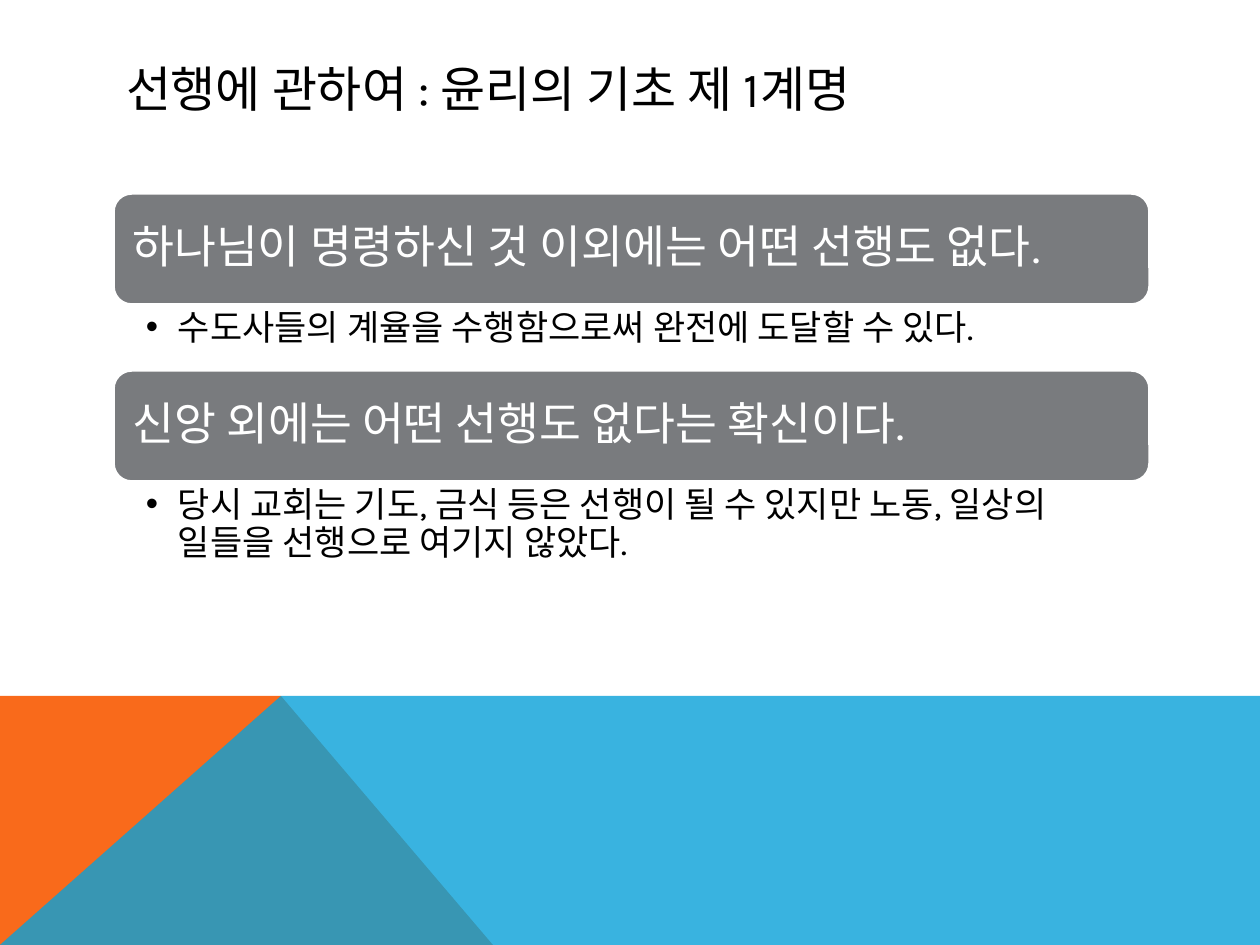
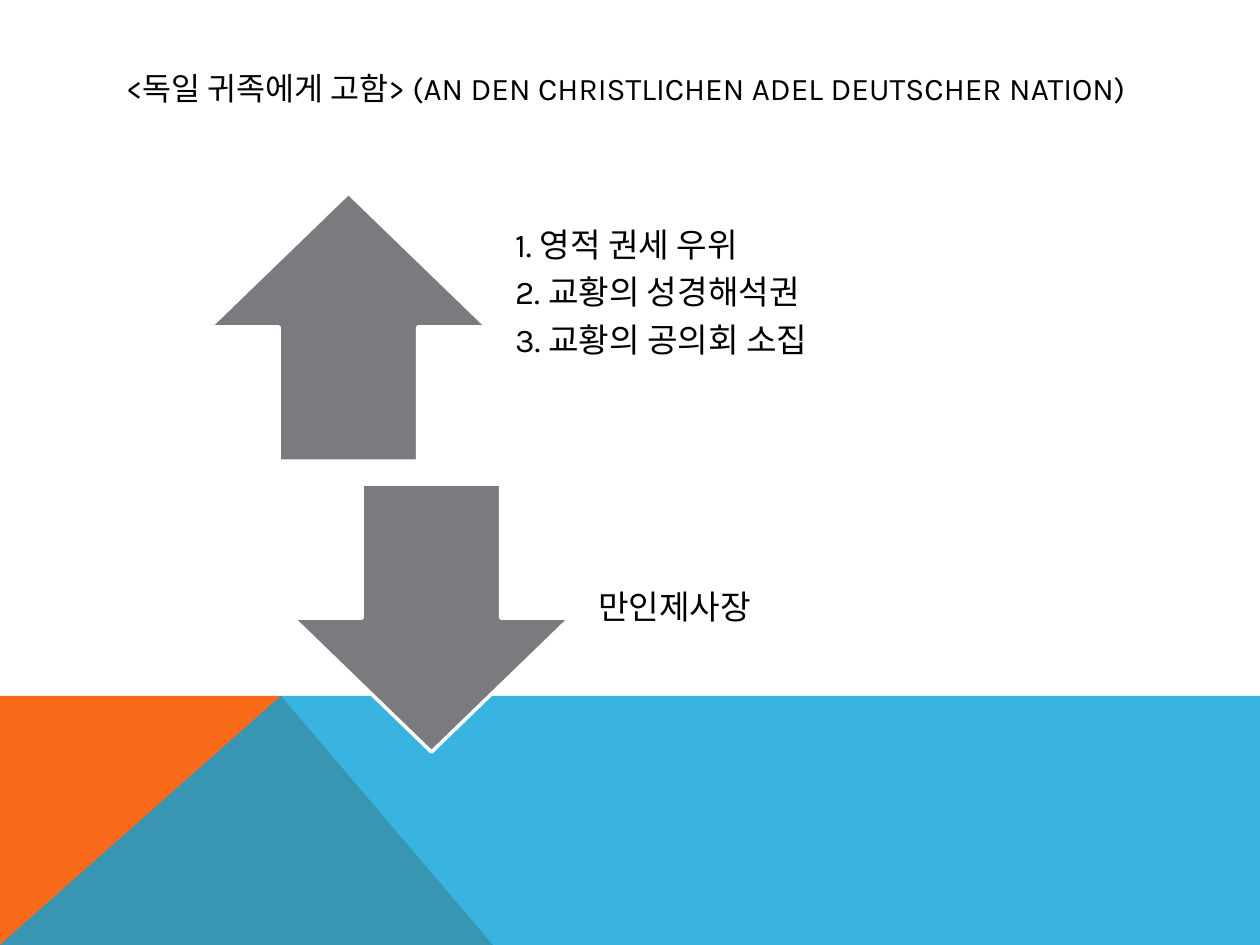
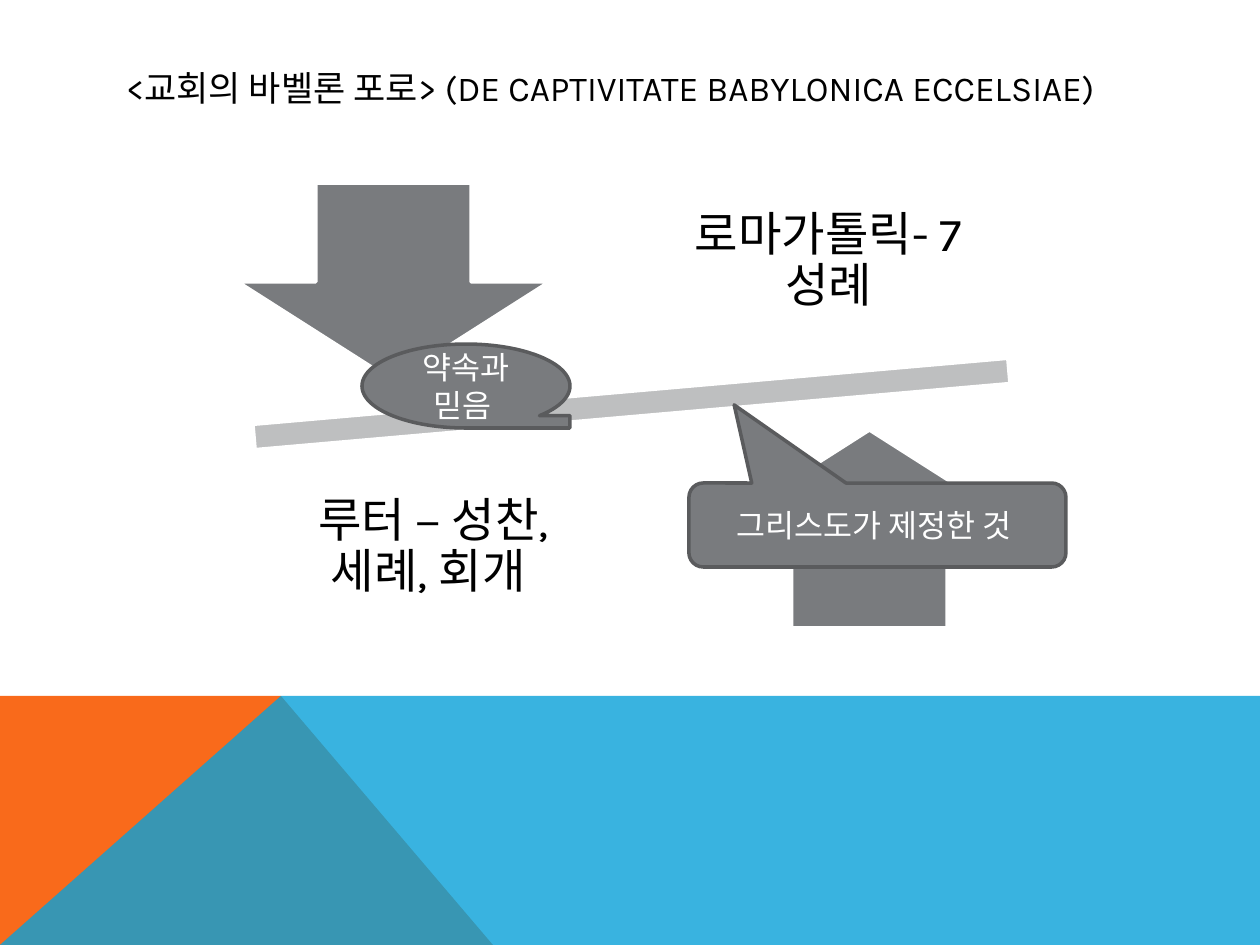
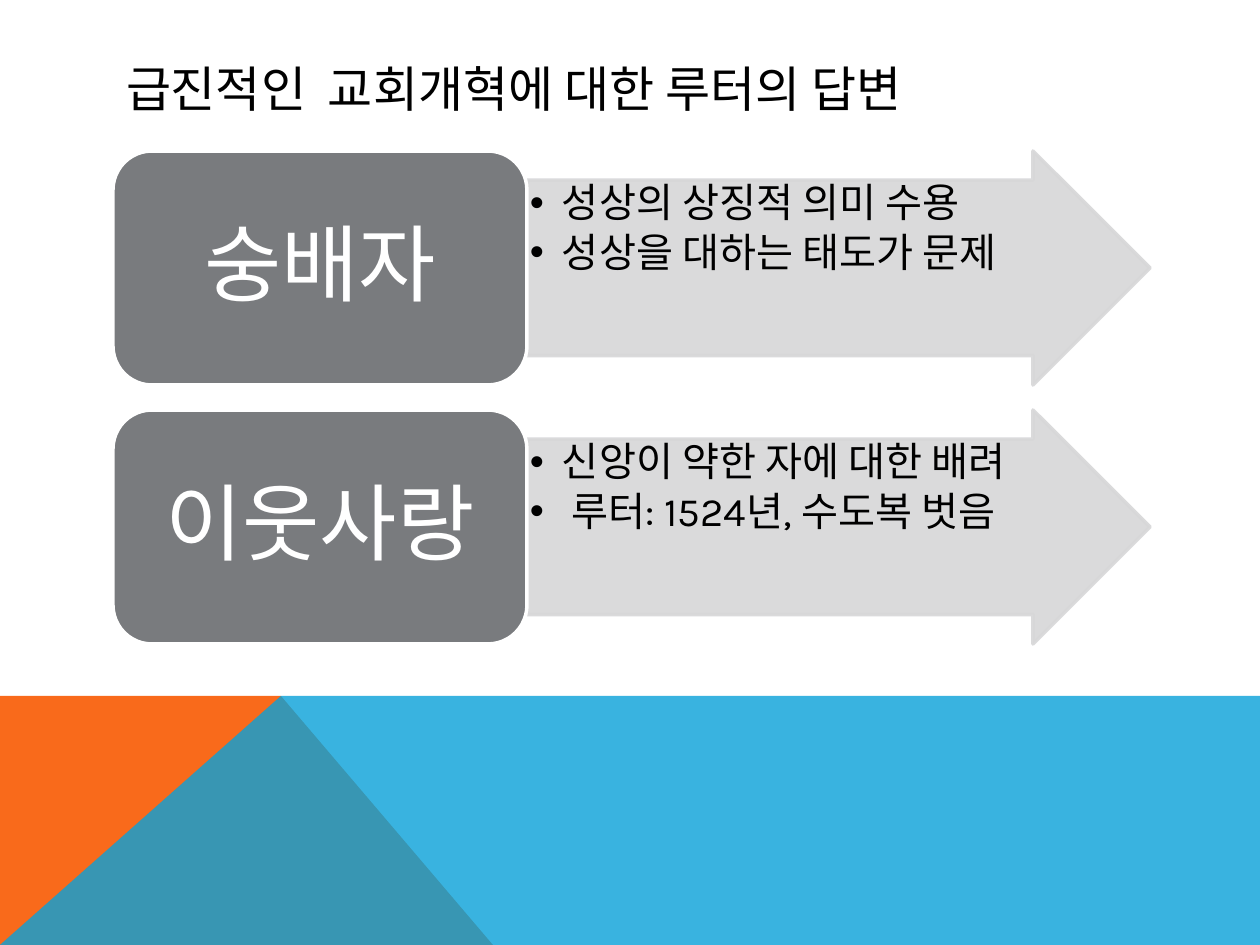
from dataclasses import dataclass

from lxml import etree
from pptx import Presentation
from pptx.dml.color import RGBColor
from pptx.enum.shapes import MSO_SHAPE
from pptx.enum.text import MSO_ANCHOR, MSO_AUTO_SIZE, PP_ALIGN
from pptx.oxml.ns import qn
from pptx.presentation import Presentation as Deck
from pptx.shapes.autoshape import Shape
from pptx.slide import Slide
from pptx.util import Emu, Pt

PX = 914400 / 126
WIDTH, HEIGHT = 1260, 945
FONT = "Karla"
TITLE_ONLY = 5

BLACK = RGBColor(0x00, 0x00, 0x00)
WHITE = RGBColor(0xFF, 0xFF, 0xFF)
ORANGE = RGBColor(0xF9, 0x6A, 0x1B)
BLUE = RGBColor(0x08, 0xA1, 0xD9)
GRAY = RGBColor(0x79, 0x7B, 0x7E)
DARK_GRAY = RGBColor(0x5A, 0x5B, 0x5D)
BEAM_GRAY = RGBColor(0xBE, 0xBF, 0xC0)
PALE_GRAY = RGBColor(0xD7, 0xD7, 0xD8)

LEFT, CENTER = PP_ALIGN.LEFT, PP_ALIGN.CENTER
TOP, MIDDLE = MSO_ANCHOR.TOP, MSO_ANCHOR.MIDDLE
ROUND_BOX = MSO_SHAPE.ROUNDED_RECTANGLE
UP_ARROW = MSO_SHAPE.UP_ARROW
DOWN_ARROW = MSO_SHAPE.DOWN_ARROW
RIGHT_ARROW = MSO_SHAPE.RIGHT_ARROW
MINUS = MSO_SHAPE.MATH_MINUS
TAPE = MSO_SHAPE.FLOWCHART_SEQUENTIAL_ACCESS_STORAGE
CALLOUT = MSO_SHAPE.ROUNDED_RECTANGULAR_CALLOUT

BAND_TOP, BAND_PEAK, BAND_FOOT = 696, 281, 493
CONTENT_LEFT, CONTENT_WIDTH = 113, 1037


@dataclass(frozen=True)
class Area:
    left: int
    top: int
    width: int
    height: int

    def emu(self) -> list[Emu]:
        return [px(n) for n in (self.left, self.top, self.width, self.height)]


@dataclass(frozen=True)
class TextStyle:
    size: int
    color: RGBColor = BLACK
    align: PP_ALIGN = LEFT
    anchor: MSO_ANCHOR = MIDDLE
    insets: tuple[int, int, int, int] = (13, 6, 13, 6)
    line_spacing: float = 0.9
    after: float = 0.35  # share of the text size
    bullet: bool = False


@dataclass(frozen=True)
class Look:
    fill: RGBColor = GRAY
    line: RGBColor = WHITE
    opacity: int = 100


BLOCK = Look()
BEAM = Look(fill=BEAM_GRAY)
PALE = Look(PALE_GRAY, PALE_GRAY, 90)
NOTE = Look(line=DARK_GRAY)

HEADING = TextStyle(26, WHITE, insets=(14, 14, 14, 14))
DETAIL = TextStyle(20, anchor=TOP, insets=(33, 5, 25, 5), after=0.2, bullet=True)
CLAIM = TextStyle(19, insets=(19, 0, 19, 19))
CLAIM_LIST = TextStyle(19, insets=(19, 0, 19, 66))
SIDE = TextStyle(27, align=CENTER, insets=(26, 26, 26, 26))
NOTE_TEXT = TextStyle(18, WHITE, CENTER, line_spacing=1, after=0)
TOPIC = TextStyle(48, WHITE, CENTER, insets=(25, 13, 25, 13))
ANSWER = TextStyle(23, anchor=TOP, insets=(3, 3, 3, 3), after=0.15, bullet=True)


def px(length: int) -> Emu:
    return Emu(round(length * PX))


def apply(target, values: dict) -> None:
    for name, value in values.items():
        setattr(target, name, value)


def set_opacity(shape: Shape, percent: int) -> None:
    """Make every plain colour of the shape's fill and line see-through."""
    for color in shape.element.spPr.iter(qn("a:srgbClr")):
        etree.SubElement(color, qn("a:alpha"), val=str(percent * 1000))


def add_bullet(para) -> None:
    props = para._p.get_or_add_pPr()
    indent = px(32)
    apply_to = {"marL": indent, "indent": -indent}
    for name, value in apply_to.items():
        props.set(name, str(value))
    etree.SubElement(props, qn("a:buFont"), typeface="Arial")
    etree.SubElement(props, qn("a:buChar"), char="•")


def write(shape: Shape, lines: list[str], style: TextStyle) -> None:
    frame = shape.text_frame
    sides = ("margin_left", "margin_top", "margin_right", "margin_bottom")
    apply(frame, {
        "word_wrap": True,
        "auto_size": MSO_AUTO_SIZE.NONE,
        "vertical_anchor": style.anchor,
        **{side: px(inset) for side, inset in zip(sides, style.insets)},
    })
    for number, line in enumerate(lines):
        para = frame.add_paragraph() if number else frame.paragraphs[0]
        apply(para, {
            "alignment": style.align,
            "line_spacing": style.line_spacing,
            "space_before": Pt(0),
            "space_after": Pt(round(style.size * style.after, 2)),
        })
        if style.bullet:
            add_bullet(para)
        span = para.add_run()
        span.text = line
        apply(span.font, {"name": FONT, "size": Pt(style.size)})
        span.font.color.rgb = style.color


def add_block(page: Slide, kind: MSO_SHAPE, area: Area, look: Look = BLOCK,
              adjustments: tuple[float, ...] = ()) -> Shape:
    shape = page.shapes.add_shape(kind, *area.emu())
    shape.shadow.inherit = False
    shape.fill.solid()
    shape.fill.fore_color.rgb = look.fill
    shape.line.color.rgb = look.line
    shape.line.width = Pt(2)
    if look.opacity < 100:
        set_opacity(shape, look.opacity)
    for number, value in enumerate(adjustments):
        shape.adjustments[number] = value
    return shape


def add_label(page: Slide, area: Area, lines: list[str], style: TextStyle) -> None:
    write(page.shapes.add_textbox(*area.emu()), lines, style)


def add_page(deck: Deck, title: str, size: int) -> Slide:
    page = deck.slides.add_slide(deck.slide_layouts[TITLE_ONLY])
    holder = page.shapes.title
    area = Area(CONTENT_LEFT, 50, CONTENT_WIDTH, 76).emu()
    apply(holder, dict(zip(("left", "top", "width", "height"), area)))
    write(holder, [title], TextStyle(size, line_spacing=1, after=0))
    return page


def add_band(deck: Deck) -> None:
    """Draw the bottom band on the shared layout, by way of a first page's shapes."""
    layout = deck.slide_layouts[TITLE_ONLY]
    page = deck.slides[0]
    pieces = [
        ([(0, BAND_TOP), (BAND_PEAK, BAND_TOP), (BAND_FOOT, HEIGHT)], ORANGE, 100),
        ([(BAND_PEAK, BAND_TOP), (WIDTH, BAND_TOP), (WIDTH, HEIGHT)], BLUE, 80),
    ]
    for number, (points, color, opacity) in enumerate(pieces):
        builder = page.shapes.build_freeform(0, HEIGHT, scale=PX)
        builder.add_line_segments(points, close=True)
        piece = builder.convert_to_shape()
        piece.shadow.inherit = False
        piece.fill.solid()
        piece.fill.fore_color.rgb = color
        piece.line.fill.background()
        if opacity < 100:
            set_opacity(piece, opacity)
        piece.element.nvSpPr.cNvPr.set("id", str(100 + number))
        layout.shapes.element.insert(2 + number, piece.element)


def add_good_works(deck: Deck) -> None:
    page = add_page(deck, "선행에 관하여 : 윤리의 기초 제 1계명", 28)
    sections = [
        ("하나님이 명령하신 것 이외에는 어떤 선행도 없다.",
         "수도사들의 계율을 수행함으로써 완전에 도달할 수 있다.", 65),
        ("신앙 외에는 어떤 선행도 없다는 확신이다.",
         "당시 교회는 기도, 금식 등은 선행이 될 수 있지만 노동, 일상의 일들을 "
         "선행으로 여기지 않았다.", 122),
    ]
    top, heading_height = 193, 112
    for heading, detail, detail_height in sections:
        area = Area(CONTENT_LEFT, top, CONTENT_WIDTH, heading_height)
        write(add_block(page, ROUND_BOX, area), [heading], HEADING)
        top += heading_height
        area = Area(CONTENT_LEFT, top, CONTENT_WIDTH, detail_height)
        add_label(page, area, [detail], DETAIL)
        top += detail_height


def add_nobility(deck: Deck) -> None:
    page = add_page(
        deck, "<독일 귀족에게 고함> (AN DEN CHRISTLICHEN ADEL DEUTSCHER NATION)", 18)
    claims = [
        (UP_ARROW, CLAIM_LIST,
         ["1. 영적 권세 우위", "2. 교황의 성경해석권", "3. 교황의 공의회 소집"]),
        (DOWN_ARROW, CLAIM, ["만인제사장"]),
    ]
    for number, (arrow, style, lines) in enumerate(claims):
        left, top = 210 + 83 * number, 193 + 291 * number
        add_block(page, arrow, Area(left, top, 277, 268))
        add_label(page, Area(left + 286, top, 470, 268), lines, style)


def add_captivity(deck: Deck) -> None:
    page = add_page(
        deck, "<교회의 바벨론 포로> (DE CAPTIVITATE BABYLONICA ECCELSIAE)", 20)
    beam = add_block(page, MINUS, Area(116, 350, 1031, 108), BEAM)
    beam.rotation = 355
    sides = [
        (DOWN_ARROW, (238, 183), (663, 158), "로마가톨릭- 7성례"),
        (UP_ARROW, (714, 430), (268, 444), "루터 – 성찬, 세례, 회개 "),
    ]
    for arrow, arrow_at, label_at, text in sides:
        add_block(page, arrow, Area(*arrow_at, 311, 198))
        add_label(page, Area(*label_at, 331, 207), [text], SIDE)
    notes = [
        (TAPE, Area(362, 344, 208, 84), (), "약속과 믿음 "),
        (CALLOUT, Area(689, 483, 377, 84), (-0.38, -1.43, 0.17), "그리스도가 제정한 것 "),
    ]
    for kind, area, adjustments, text in notes:
        write(add_block(page, kind, area, NOTE, adjustments), [text], NOTE_TEXT)


def add_answers(deck: Deck) -> None:
    page = add_page(deck, "급진적인  교회개혁에 대한 루터의 답변", 28)
    rows = [
        ("숭배자", ["성상의 상징적 의미 수용", "성상을 대하는 태도가 문제"]),
        ("이웃사랑", ["신앙이 약한 자에 대한 배려", " 루터: 1524년, 수도복 벗음"]),
    ]
    topic_width, height = 414, 234
    for number, (topic, answers) in enumerate(rows):
        top = 151 + 259 * number
        area = Area(CONTENT_LEFT + topic_width, top, CONTENT_WIDTH - topic_width, height)
        arrow = add_block(page, RIGHT_ARROW, area, PALE, (0.75, 0.5))
        write(arrow, answers, ANSWER)
        area = Area(CONTENT_LEFT, top, topic_width, height)
        write(add_block(page, ROUND_BOX, area), [topic], TOPIC)


def main() -> None:
    deck = Presentation()
    deck.slide_width, deck.slide_height = px(WIDTH), px(HEIGHT)
    for add_content in (add_good_works, add_nobility, add_captivity, add_answers):
        add_content(deck)
    add_band(deck)
    deck.save("out.pptx")


if __name__ == "__main__":
    main()
